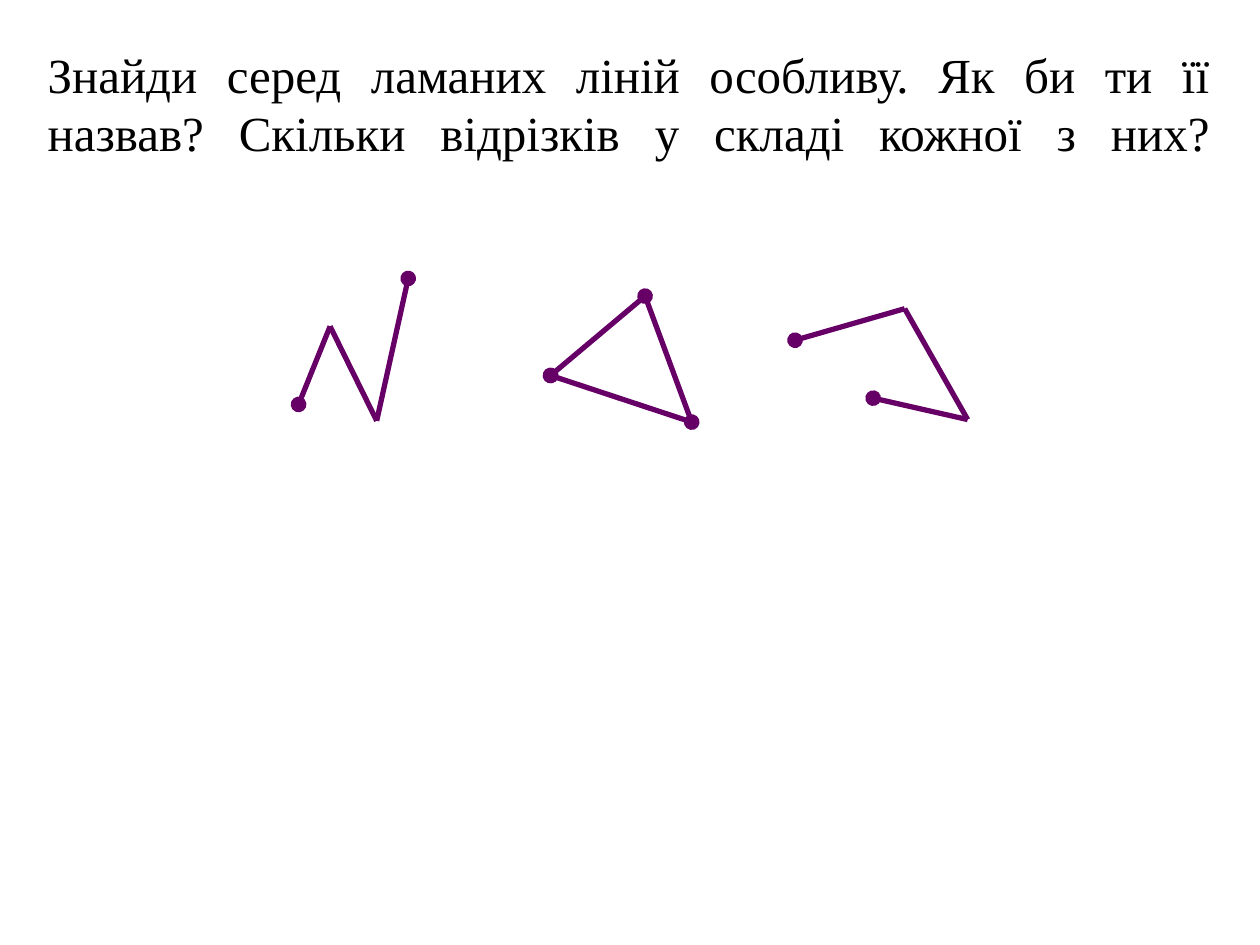
import pptx
import pptx.dml.color
import pptx.enum.shapes
import pptx.enum.text
import pptx.oxml.ns
import pptx.util
import lxml.etree

TASK = ("Знайди серед ламаних ліній особливу. Як би ти її назвав? "
        "Скільки відрізків у складі кожної з них?")
OPEN_ZIG = [(2.37, 3.21), (2.62, 2.59), (2.99, 3.34), (3.24, 2.21)]
CLOSED = [(4.37, 2.98), (5.12, 2.35), (5.49, 3.35), (4.37, 2.98)]
OPEN_HOOK = [(6.31, 2.7), (7.18, 2.45), (7.68, 3.33), (6.93, 3.16)]


def inch(*nums):
    """Turn numbers into lengths in inches."""
    return [pptx.util.Inches(num) for num in nums]


def color(code):
    """Turn a hex string into a colour."""
    return pptx.dml.color.RGBColor.from_string(code)


def style(item, form):
    """Set each format value on the item."""
    for name, value in form.items():
        setattr(item, name, value)


def add(node, tag, **attrs):
    """Append a drawing element with its attributes."""
    return lxml.etree.SubElement(node, pptx.oxml.ns.qn(tag), attrs)


def title(slide, text, box, size):
    """Write a justified title whose last line fills the width too."""
    frame = slide.shapes.add_textbox(*inch(*box)).text_frame
    left, small = inch(0.1, 0.05)
    style(frame, {
        "word_wrap": True,
        "vertical_anchor": pptx.enum.text.MSO_ANCHOR.MIDDLE,
        "margin_left": left,
        "margin_right": small,
        "margin_top": small,
        "margin_bottom": small,
    })
    para = frame.paragraphs[0]
    para.alignment = pptx.enum.text.PP_ALIGN.JUSTIFY
    run = para.add_run()
    run.text = text
    style(run.font, {"name": "Times New Roman", "size": pptx.util.Pt(size)})
    run.font.color.rgb = color("000000")
    para.add_line_break()
    add(para._p[-1], "a:rPr", sz=str(size * 100))
    add(para._p, "a:endParaRPr", sz=str(size * 100))


def stroke(slide, start, end, head, tail):
    """Draw one segment with a dot at each marked end."""
    kind = pptx.enum.shapes.MSO_CONNECTOR.STRAIGHT
    link = slide.shapes.add_connector(kind, *inch(*start, *end))
    link.line.width = pptx.util.Pt(3)
    link.line.color.rgb = color("660066")
    props = link.line._get_or_add_ln()
    for tag, shown in (("a:headEnd", head), ("a:tailEnd", tail)):
        if shown:
            add(props, tag, type="oval")
    add(link._element.spPr, "a:effectLst")


def chain(slide, points):
    """Draw a broken line, dotted at its ends or at all corners if closed."""
    closed = points[0] == points[-1]
    last = len(points) - 2
    for index, (start, end) in enumerate(zip(points, points[1:])):
        stroke(slide, start, end, index == 0, closed or index == last)


def main():
    """Build and save the slide."""
    deck = pptx.Presentation()
    wide, high = inch(10, 7.5)
    style(deck, {"slide_width": wide, "slide_height": high})
    slide = deck.slides.add_slide(deck.slide_layouts[6])
    title(slide, TASK, (0.28, 0.29, 9.37, 1.52), 28)
    for points in (OPEN_ZIG, CLOSED, OPEN_HOOK):
        chain(slide, points)
    deck.save("out.pptx")


if __name__ == "__main__":
    main()
